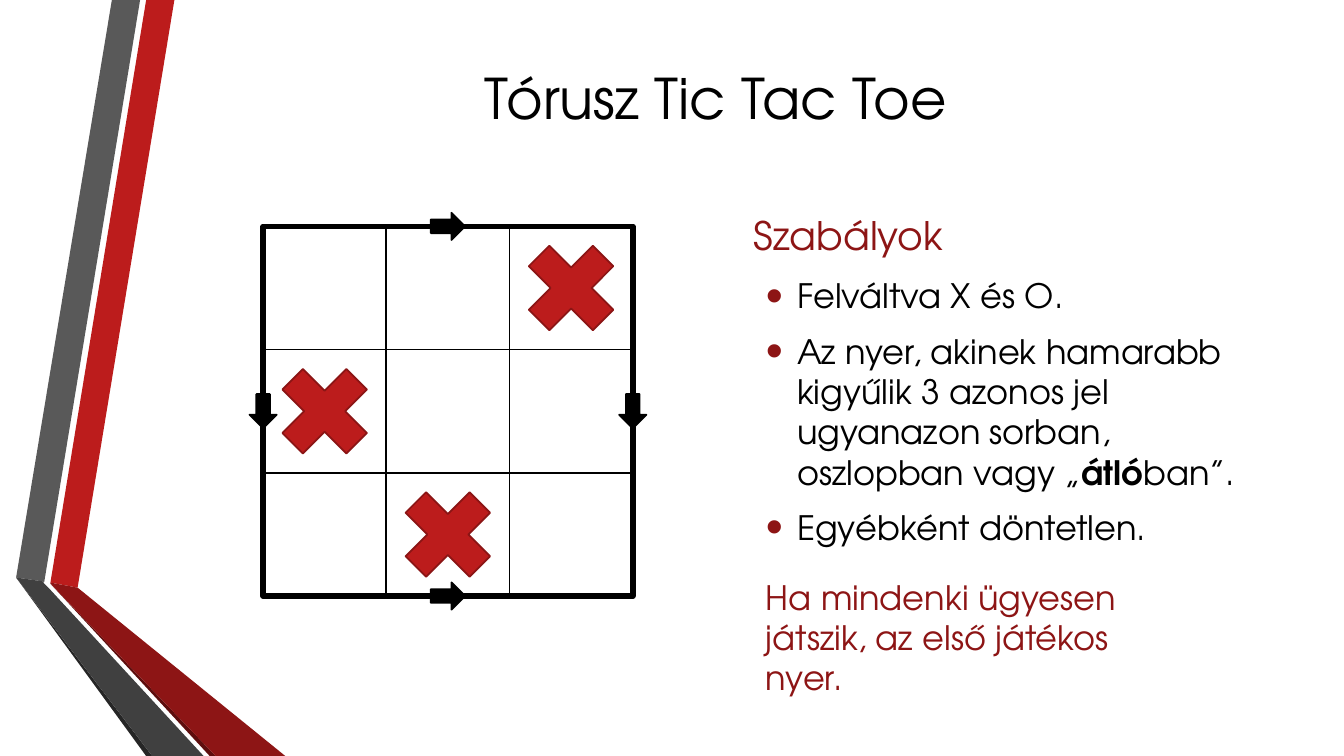
import dataclasses

import pptx
import pptx.dml.color
import pptx.enum.shapes
import pptx.enum.text
import pptx.oxml
import pptx.oxml.ns
import pptx.util

SHAPE = pptx.enum.shapes.MSO_SHAPE
ALIGN = pptx.enum.text.PP_ALIGN
ANCHOR = pptx.enum.text.MSO_ANCHOR


@dataclasses.dataclass(frozen=True)
class Theme:
    font: str = "TeX Gyre Adventor"
    ink: str = "000000"
    paper: str = "FFFFFF"
    red: str = "BC1C1C"
    cross_edge: str = "8B1515"
    dark_red: str = "8D1515"
    deep_red: str = "5E0E0E"
    grey: str = "595959"
    dark_grey: str = "404040"
    deep_grey: str = "262626"
    title_size: int = 40
    heading_size: int = 28
    body_size: int = 24
    thin: float = 1.25
    thick: float = 4


def rgb(colour):
    return pptx.dml.color.RGBColor.from_string(colour)


class Canvas:
    """Draws on one slide; lengths are in a grid of 160 columns by 90 rows."""

    COLUMNS, ROWS = 160, 90

    def __init__(self, presentation, theme):
        self.theme = theme
        self.slide = presentation.slides.add_slide(presentation.slide_layouts[6])
        self.column = presentation.slide_width / self.COLUMNS
        self.row = presentation.slide_height / self.ROWS

    def place(self, left, top, width, height):
        return (round(left * self.column), round(top * self.row),
                round(width * self.column), round(height * self.row))

    def paint(self, shape, fill=None, line=None, weight=None):
        shape.shadow.inherit = False
        if fill:
            shape.fill.solid()
            shape.fill.fore_color.rgb = rgb(fill)
        else:
            shape.fill.background()
        if line:
            shape.line.color.rgb = rgb(line)
            shape.line.width = pptx.util.Pt(weight or self.theme.thin)
        else:
            shape.line.fill.background()

    def polygon(self, points, fill):
        corners = [(round(x * self.column), round(y * self.row)) for x, y in points]
        builder = self.slide.shapes.build_freeform(*corners[0])
        builder.add_line_segments(corners[1:], close=True)
        self.paint(builder.convert_to_shape(), fill)

    def shape(self, kind, box, turn=0, **look):
        shape = self.slide.shapes.add_shape(kind, *self.place(*box))
        shape.rotation = turn
        self.paint(shape, **look)

    def text(self, paragraphs, box, size, colour, align=ALIGN.LEFT,
             anchor=ANCHOR.TOP, before=0, after=0, bullet=None):
        """Write paragraphs; words between asterisks are bold."""
        frame = self.slide.shapes.add_textbox(*self.place(*box)).text_frame
        frame.word_wrap = True
        frame.vertical_anchor = anchor
        for index, words in enumerate(paragraphs):
            paragraph = frame.add_paragraph() if index else frame.paragraphs[0]
            paragraph.alignment = align
            paragraph.space_before = pptx.util.Pt(before)
            paragraph.space_after = pptx.util.Pt(after)
            if bullet:
                self.bullet(paragraph, bullet)
            for part, piece in enumerate(words.split("*")):
                run = paragraph.add_run()
                run.text = piece
                run.font.name = self.theme.font
                run.font.size = pptx.util.Pt(size)
                run.font.bold = part % 2 == 1
                run.font.color.rgb = rgb(colour)

    def bullet(self, paragraph, colour):
        properties = paragraph._p.get_or_add_pPr()
        indent = pptx.util.Inches(0.31)
        properties.set("marL", str(indent))
        properties.set("indent", str(-indent))
        namespace = pptx.oxml.ns.nsdecls("a")
        for element in (
            f'<a:buClr {namespace}><a:srgbClr val="{colour}"/></a:buClr>',
            f'<a:buSzPct {namespace} val="145000"/>',
            f'<a:buFont {namespace} typeface="Arial"/>',
            f'<a:buChar {namespace} char="•"/>',
        ):
            properties.append(pptx.oxml.parse_xml(element))


def draw_ribbons(canvas):
    theme = canvas.theme
    ribbons = [
        (theme.red, [(6, 69.36), (9.24, 69.96), (20.76, 0), (17.4, 0)]),
        (theme.grey, [(16.68, 0), (13.32, 0), (1.92, 68.76), (5.28, 69.24)]),
        (theme.deep_grey, [(1.92, 68.76), (17.4, 90), (18.12, 90)]),
        (theme.deep_red, [(6, 69.48), (24.96, 90), (25.68, 90)]),
        (theme.dark_red, [(6, 69.48), (25.68, 90), (33.96, 90), (9.24, 69.96),
                          (6, 69.36)]),
        (theme.dark_grey, [(24.24, 90), (5.76, 69.96), (5.16, 69.36),
                           (5.28, 69.24), (1.92, 68.76), (18.12, 90)]),
    ]
    for colour, points in ribbons:
        canvas.polygon(points, colour)


def draw_board(canvas):
    theme = canvas.theme
    left, top, cell = 31.32, 26.95, 14.67
    side = 3 * cell

    def square(row, column):
        return left + column * cell, top + row * cell, cell, cell

    for index in range(9):
        canvas.shape(SHAPE.RECTANGLE, square(*divmod(index, 3)),
                     fill=theme.paper, line=theme.ink)
    for row, column in ((0, 2), (1, 0), (2, 1)):
        canvas.shape(SHAPE.MATH_MULTIPLY, square(row, column),
                     fill=theme.red, line=theme.cross_edge)

    length, breadth = 4.08, 3.24
    for across, down, turn in ((0.5, 0, 0), (0.5, 1, 0), (1, 0.5, 90), (0, 0.5, 90)):
        box = (left + across * side - length / 2,
               top + down * side - breadth / 2, length, breadth)
        canvas.shape(SHAPE.RIGHT_ARROW, box, turn, fill=theme.ink, line=theme.ink)
    canvas.shape(SHAPE.RECTANGLE, (left, top, side, side),
                 line=theme.ink, weight=theme.thick)


def write_rules(canvas):
    theme = canvas.theme
    canvas.text(["Tórusz Tic Tac Toe"], (19.44, 0, 131.52, 23.04),
                theme.title_size, theme.ink, align=ALIGN.CENTER, anchor=ANCHOR.MIDDLE)
    canvas.text(["Szabályok"], (88.56, 23.76, 60.72, 7.56), theme.heading_size,
                theme.dark_red, anchor=ANCHOR.BOTTOM, before=5.6, after=6)
    rules = [
        "Felváltva X és O.",
        "Az nyer, akinek hamarabb kigyűlik 3 azonos jel ugyanazon sorban, "
        "oszlopban vagy „*átló*ban”.",
        "Egyébként döntetlen.",
    ]
    canvas.text(rules, (90, 32.16, 64.2, 34.56), theme.body_size, theme.ink,
                before=4.8, after=6, bullet=theme.dark_red)
    canvas.text(["Ha mindenki ügyesen játszik, az első játékos nyer."],
                (90, 68.04, 51.6, 15.72), theme.body_size, theme.dark_red)


def main():
    presentation = pptx.Presentation()
    presentation.slide_width = pptx.util.Inches(13.33)
    presentation.slide_height = pptx.util.Inches(7.5)
    canvas = Canvas(presentation, Theme())
    draw_ribbons(canvas)
    write_rules(canvas)
    draw_board(canvas)
    presentation.save("out.pptx")


if __name__ == "__main__":
    main()
